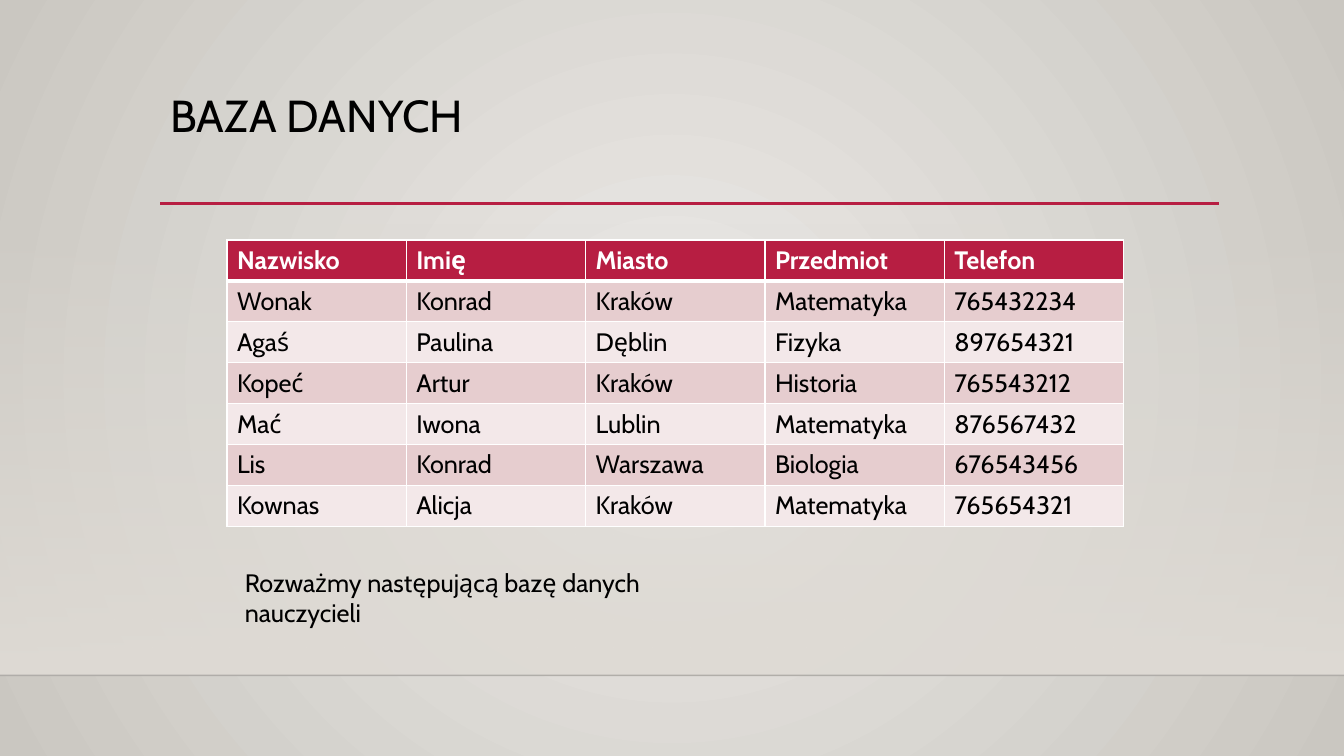
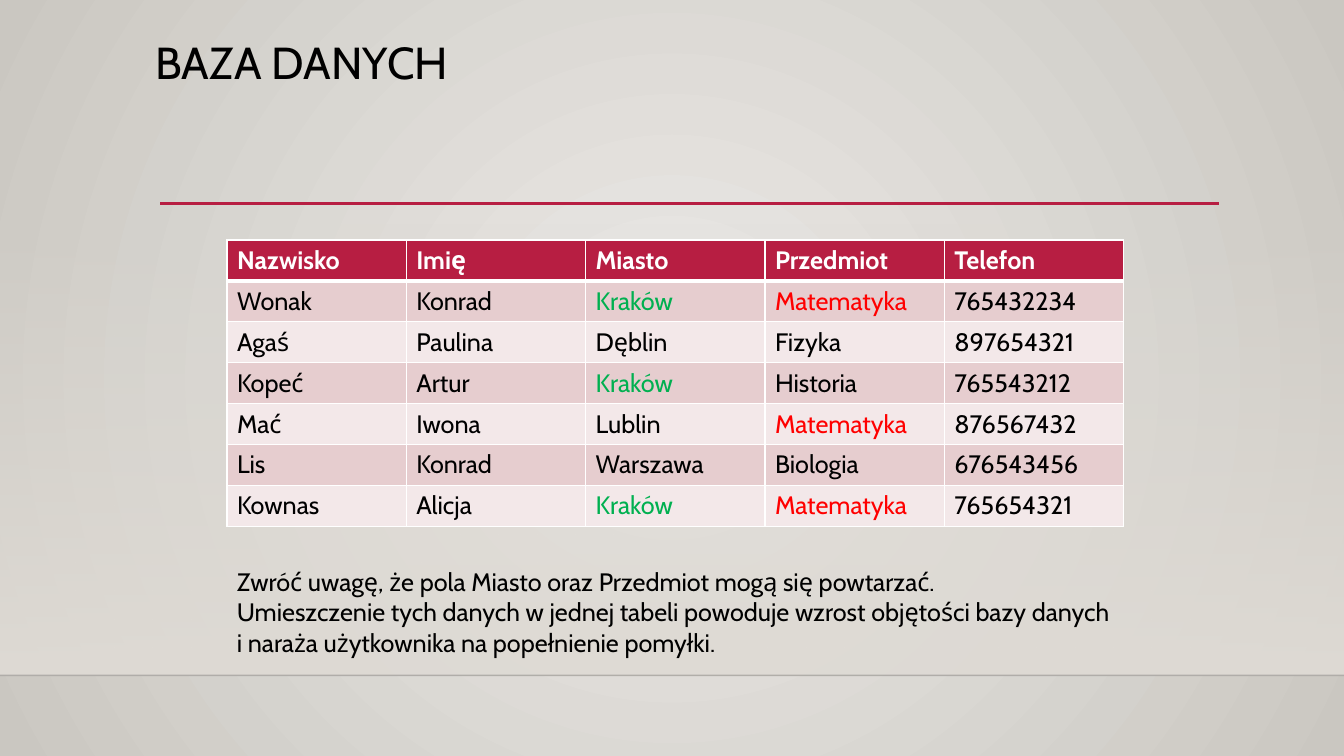
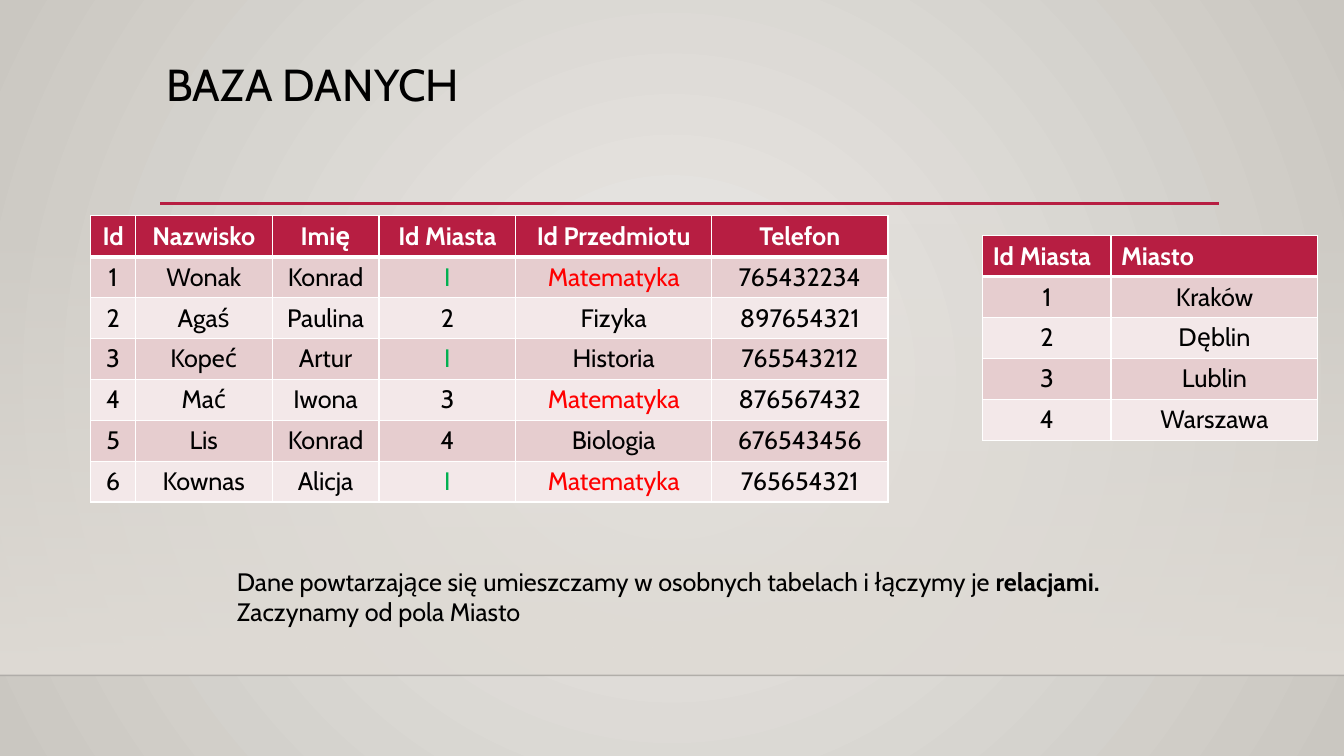
"""Build three slides on a teachers' database and its relations."""
from lxml.etree import SubElement
from pptx import Presentation
from pptx.dml.color import RGBColor
from pptx.enum.shapes import MSO_CONNECTOR as CONN, MSO_SHAPE as SHAPE
from pptx.enum.text import PP_ALIGN as ALIGN
from pptx.oxml.ns import qn
from pptx.util import Cm, Pt

FONT = "Cabin"
RED, GREEN, BLACK, WHITE = "FF0000", "00B050", "000000", "FFFFFF"
ACCENT, SAND = "B71E42", "DFDBD5"
BACK = ("ECEAE7", "CAC7C1")
BANDS = ("F3E8E9", "E6CDCF")
WIDTH, HEIGHT, ROW = 33.87, 19.05, 1.03
FLOOR, BAND_TOP = 17.02, 5.61

TITLE = "BAZA DANYCH"
HEADS = ["Nazwisko", "Imię", "Miasto", "Przedmiot", "Telefon"]
TEACHERS = [
    ["Wonak", "Konrad", "Kraków", "Matematyka", "765432234"],
    ["Agaś", "Paulina", "Dęblin", "Fizyka", "897654321"],
    ["Kopeć", "Artur", "Kraków", "Historia", "765543212"],
    ["Mać", "Iwona", "Lublin", "Matematyka", "876567432"],
    ["Lis", "Konrad", "Warszawa", "Biologia", "676543456"],
    ["Kownas", "Alicja", "Kraków", "Matematyka", "765654321"],
]
CITIES = ["Kraków", "Dęblin", "Lublin", "Warszawa"]
CITY_ROWS = [[str(n), city] for n, city in enumerate(CITIES, 1)]
CITY_IDS = {city: n for n, city in CITY_ROWS} | {"Kraków": "I"}
LINKED_HEADS = ["Id", "Nazwisko", "Imię", "Id Miasta", "Id Przedmiotu", "Telefon"]
LINKED = [[str(n), last, first, CITY_IDS[city], subject, phone]
          for n, (last, first, city, subject, phone) in enumerate(TEACHERS, 1)]

FULL = dict(at=(5.72, 6.05), cols=[4.52] * 5, rows=[HEADS] + TEACHERS)
SLIDES = [
    dict(title=(4.04, 2.24), tables=[FULL], note_at=(5.92, 14.17, 12.78, 1.02),
         note=[[("Rozważmy następującą bazę danych nauczycieli", False)]]),
    dict(title=(3.66, 0.91), note_at=(5.72, 14.15, 22.58, 2.57),
         tables=[FULL | dict(marks={"Kraków": GREEN, "Matematyka": RED})],
         note=[[("Zwróć uwagę, że pola Miasto oraz Przedmiot mogą się powtarzać.", False)],
               [("Umieszczenie tych danych w jednej tabeli powoduje wzrost objętości bazy "
                 "danych i naraża użytkownika na popełnienie pomyłki.", False)]]),
    dict(title=(3.94, 1.47), note_at=(5.72, 14.15, 22.58, 1.8),
         tables=[dict(at=(2.29, 5.44), cols=[1.12, 3.45, 2.69, 3.45, 4.93, 4.45],
                      rows=[LINKED_HEADS] + LINKED, marks={"I": GREEN, "Matematyka": RED},
                      head_align=ALIGN.CENTER, align=ALIGN.CENTER),
                 dict(at=(24.77, 5.94), cols=[3.23, 5.21],
                      rows=[["Id Miasta", "Miasto"]] + CITY_ROWS, align=ALIGN.CENTER)],
         note=[[("Dane powtarzające się umieszczamy w osobnych tabelach i łączymy je ", False),
                ("relacjami. ", True), ("Zaczynamy od pola Miasto", False)]]),
]


def rgb(color):
    """Turn a hex string into a colour."""
    return RGBColor.from_string(color)


def set_alpha(color_el, percent):
    """Set the opacity of a colour element."""
    SubElement(color_el, qn("a:alpha"), val=str(percent * 1000))


def add_run(p, text, color=BLACK, size=18, bold=False):
    """Append a formatted run to a paragraph."""
    r = p.add_run()
    r.text = text
    for name, value in dict(name=FONT, size=Pt(size), bold=bold).items():
        setattr(r.font, name, value)
    r.font.color.rgb = rgb(color)


def add_text(s, box, paragraphs, size=18, spacing=None):
    """Add a wrapping text box from lists of (text, bold) runs."""
    tf = s.shapes.add_textbox(*map(Cm, box)).text_frame
    tf.word_wrap = True
    for i, runs in enumerate(paragraphs):
        p = tf.add_paragraph() if i else tf.paragraphs[0]
        p.line_spacing = spacing
        for text, bold in runs:
            add_run(p, text, size=size, bold=bold)


def add_rule(s, left, right, y, color, width):
    """Add a horizontal line and return it."""
    line = s.shapes.add_connector(CONN.STRAIGHT, Cm(left), Cm(y), Cm(right), Cm(y))
    line.line.color.rgb = rgb(color)
    line.line.width = Pt(width)
    SubElement(line.element.spPr, qn("a:effectLst"))
    return line


def set_stops(fill, colors):
    """Give a fill a gradient of two colours."""
    fill.gradient()
    for stop, color, position in zip(fill.gradient_stops, colors, (0, 1)):
        stop.color.rgb = rgb(color)
        stop.position = position


def set_background(master):
    """Give the master a radial background."""
    set_stops(master.background.fill, BACK)
    grad = master.element.find(".//" + qn("a:gradFill"))
    grad.remove(grad.find(qn("a:lin")))
    radial = SubElement(grad, qn("a:path"), path="circle")
    SubElement(radial, qn("a:fillToRect"), dict.fromkeys("ltrb", "50000"))


def add_frame(s):
    """Draw the band, floor line and title rule."""
    band = s.shapes.add_shape(SHAPE.RECTANGLE, 0, Cm(BAND_TOP), Cm(WIDTH), Cm(FLOOR - BAND_TOP))
    band.shadow.inherit = False
    band.line.fill.background()
    set_stops(band.fill, (SAND, SAND))
    band.fill.gradient_angle = 270
    set_alpha(band.element.find(".//" + qn("a:srgbClr")), 0)
    floor = add_rule(s, 0, WIDTH, FLOOR, "000001", 1)
    set_alpha(floor.element.find(".//" + qn("a:srgbClr")), 20)
    add_rule(s, 4.04, 30.73, 5.13, ACCENT, 2.5)


def set_borders(cell, row):
    """Draw white borders, thick under the header."""
    tc_pr = cell._tc.get_or_add_tcPr()
    for side in "LRTB":
        width = 3 if (row, side) in ((0, "B"), (1, "T")) else 1
        ln = SubElement(tc_pr, qn("a:ln" + side), w=str(Pt(width)))
        SubElement(SubElement(ln, qn("a:solidFill")), qn("a:srgbClr"), val=WHITE)


def add_grid(s, at, cols, rows, marks={}, head_align=None, align=None):
    """Add a banded table, colouring the marked values."""
    box = (*at, sum(cols), ROW * len(rows))
    table = s.shapes.add_table(len(rows), len(cols), *map(Cm, box)).table
    for col, width in zip(table.columns, cols):
        col.width = Cm(width)
    for i, values in enumerate(rows):
        table.rows[i].height = Cm(ROW)
        head = i == 0
        for j, value in enumerate(values):
            cell = table.cell(i, j)
            set_borders(cell, i)
            cell.fill.solid()
            cell.fill.fore_color.rgb = rgb(ACCENT if head else BANDS[i % 2])
            p = cell.text_frame.paragraphs[0]
            p.alignment = head_align if head else align
            add_run(p, value, WHITE if head else marks.get(value, BLACK), bold=head)


def main():
    """Build and save the slides."""
    prs = Presentation()
    prs.slide_width, prs.slide_height = Cm(WIDTH), Cm(HEIGHT)
    set_background(prs.slide_master)
    for content in SLIDES:
        s = prs.slides.add_slide(prs.slide_layouts[6])
        add_frame(s)
        add_text(s, (*content["title"], 26.67, 2.92), [[(TITLE, False)]], 32, 0.9)
        for table in content["tables"]:
            add_grid(s, **table)
        add_text(s, content["note_at"], content["note"])
    prs.save("out.pptx")


if __name__ == "__main__":
    main()
